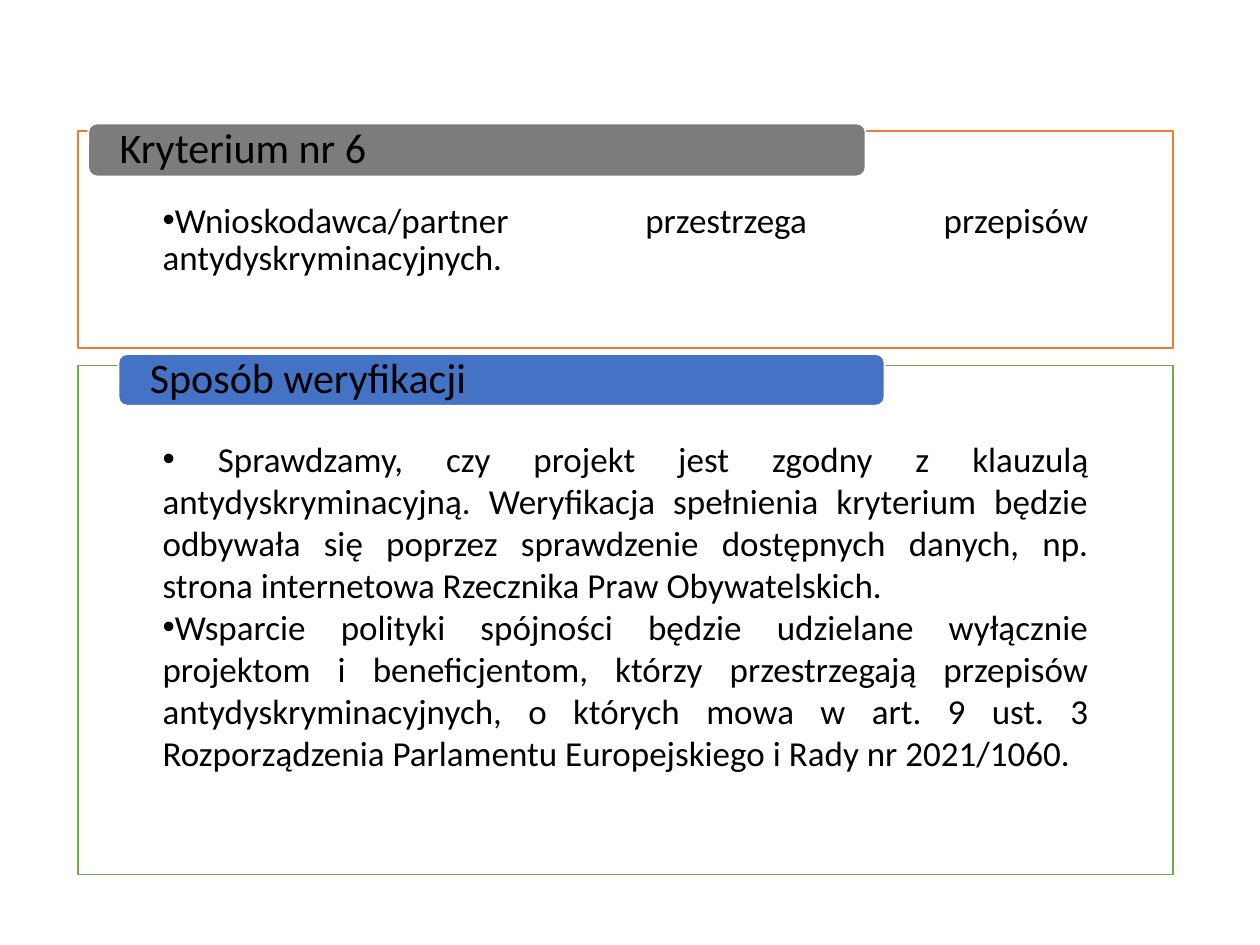
"""Build the criterion no. 6 slide with its verification method."""
from lxml.etree import SubElement
from pptx import Presentation
from pptx.dml.color import RGBColor
from pptx.enum.shapes import MSO_SHAPE as SHAPE
from pptx.enum.text import MSO_ANCHOR as ANCHOR, MSO_AUTO_SIZE as AUTOSIZE, PP_ALIGN as ALIGN
from pptx.oxml.ns import qn
from pptx.util import Inches, Pt

BLACK = RGBColor(0x00, 0x00, 0x00)
WHITE = RGBColor(0xFF, 0xFF, 0xFF)
ORANGE = RGBColor(0xED, 0x7D, 0x31)
GREEN = RGBColor(0x70, 0xAD, 0x47)
GRAY = RGBColor(0x7C, 0x7C, 0x7C)
BLUE = RGBColor(0x44, 0x72, 0xC4)


class SlideBuilder:
    font = "Calibri"
    label_size = Pt(24)
    list_size = Pt(20)
    frame_left, frame_width = 0.62, 8.69

    def __init__(self, s):
        self.s = s

    def paint(self, sp, fill, line):
        sp.fill.solid()
        sp.fill.fore_color.rgb = fill
        sp.line.color.rgb = line
        sp.line.width = Pt(1)

    def text_frame(self, sp, anchor, side, top=0, bottom=0):
        tf = sp.text_frame
        tf.word_wrap = True
        tf.auto_size = AUTOSIZE.NONE
        tf.vertical_anchor = anchor
        tf.margin_left = tf.margin_right = Inches(side)
        tf.margin_top, tf.margin_bottom = Inches(top), Inches(bottom)
        return tf

    def run(self, p, text, size, bold=False):
        r = p.add_run()
        r.text = text
        r.font.name = self.font
        r.font.size = size
        r.font.bold = bold
        r.font.color.rgb = BLACK

    def bullet(self, p):
        pPr = p._p.get_or_add_pPr()
        pPr.set("marL", "0")
        pPr.set("indent", "0")
        SubElement(pPr, qn("a:buFont")).set("typeface", "Arial")
        SubElement(pPr, qn("a:buChar")).set("char", "•")

    def framed_list(self, idx, top, height, line, items, spacing=1.0):
        sp = self.s.placeholders[idx]
        sp.left, sp.top = Inches(self.frame_left), Inches(top)
        sp.width, sp.height = Inches(self.frame_width), Inches(height)
        self.paint(sp, WHITE, line)
        tf = self.text_frame(sp, ANCHOR.TOP, 0.67, 0.57, 0.16)
        for i, runs in enumerate(items):
            p = tf.add_paragraph() if i else tf.paragraphs[0]
            self.bullet(p)
            p.alignment = ALIGN.JUSTIFY
            p.line_spacing = spacing
            p.space_before = p.space_after = Pt(0)
            for text, bold in runs:
                self.run(p, text, self.list_size, bold)

    def label(self, shape, left, top, width, height, fill, text):
        sp = self.s.shapes.add_shape(
            shape, Inches(left), Inches(top), Inches(width), Inches(height))
        sp.shadow.inherit = False
        self.paint(sp, fill, WHITE)
        p = self.text_frame(sp, ANCHOR.MIDDLE, 0.23).paragraphs[0]
        p.alignment = ALIGN.LEFT
        p.line_spacing = 0.9
        self.run(p, text, self.label_size)


def main():
    prs = Presentation()
    prs.slide_width, prs.slide_height = Inches(10), Inches(7.5)
    s = prs.slides.add_slide(prs.slide_layouts.get_by_name("Two Content"))
    title = s.shapes.title._element
    title.getparent().remove(title)

    builder = SlideBuilder(s)
    builder.framed_list(1, 1.04, 1.72, ORANGE, [
        [("Wnioskodawca/partner przestrzega przepisów antydyskryminacyjnych. ", False)],
    ], spacing=0.9)
    builder.framed_list(2, 2.9, 4.04, GREEN, [
        [(" ", True),
         ("Sprawdzamy, czy projekt jest zgodny z klauzulą antydyskryminacyjną. "
          "Weryfikacja spełnienia kryterium będzie odbywała się poprzez sprawdzenie "
          "dostępnych danych, np. strona internetowa Rzecznika Praw Obywatelskich. ", False)],
        [("Wsparcie polityki spójności będzie udzielane wyłącznie projektom i "
          "beneficjentom, którzy przestrzegają przepisów antydyskryminacyjnych, o "
          "których mowa w art. 9 ust. 3 Rozporządzenia Parlamentu Europejskiego i "
          "Rady nr 2021/1060.", False)],
    ])
    builder.label(SHAPE.ROUNDED_RECTANGLE, 0.7, 0.98, 6.17, 0.42, GRAY, "Kryterium nr 6")
    builder.label(SHAPE.FLOWCHART_ALTERNATE_PROCESS, 0.94, 2.81, 6.08, 0.41, BLUE,
                  "Sposób weryfikacji")
    prs.save("out.pptx")


if __name__ == "__main__":
    main()
